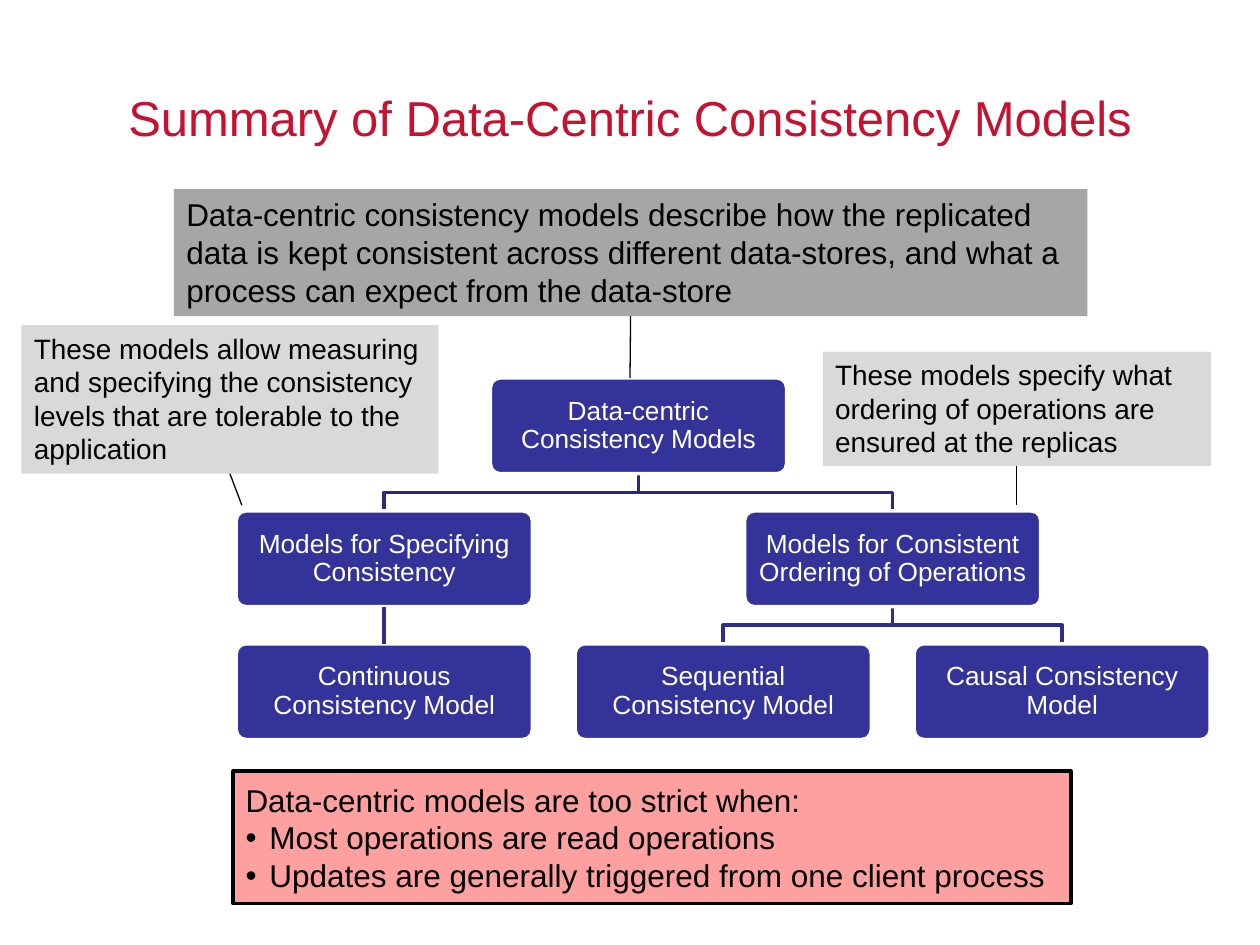
from pptx import Presentation
from pptx.dml.color import RGBColor
from pptx.enum.shapes import MSO_CONNECTOR, MSO_SHAPE
from pptx.enum.text import MSO_ANCHOR, PP_ALIGN
from pptx.oxml.ns import qn
from pptx.util import Inches, Pt
from lxml import etree

RECTANGLE = MSO_SHAPE.RECTANGLE
ROUNDED = MSO_SHAPE.ROUNDED_RECTANGLE
STRAIGHT = MSO_CONNECTOR.STRAIGHT
LEFT, CENTER = PP_ALIGN.LEFT, PP_ALIGN.CENTER
TOP, MIDDLE = MSO_ANCHOR.TOP, MSO_ANCHOR.MIDDLE
BOTTOM_SITE, TOP_SITE = 2, 0

FONT = "Arial"
COLORS = {
    "title": "C41230", "black": "000000", "white": "FFFFFF",
    "node": "333399", "upper_link": "29297B", "lower_link": "2E2E8B",
    "summary": "A6A6A6", "note": "D9D9D9", "warning": "FFA0A0",
}

NODE_WIDTH, NODE_HEIGHT = 2.35, 0.76
TREE_TOP, LEVEL_STEP = 3.0, 1.055
FIRST_CENTER, LEAF_STEP = 3.05, 2.69
LEAF_CENTERS = [FIRST_CENTER + i * LEAF_STEP for i in range(3)]
ORDERING_CENTER = (LEAF_CENTERS[1] + LEAF_CENTERS[2]) / 2
ROOT_CENTER = (FIRST_CENTER + ORDERING_CENTER) / 2

# name: (text, centre, level)
NODES = {
    "root": ("Data-centric Consistency Models", ROOT_CENTER, 0),
    "specifying": ("Models for Specifying Consistency", FIRST_CENTER, 1),
    "ordering": ("Models for Consistent Ordering of Operations", ORDERING_CENTER, 1),
    "continuous": ("Continuous Consistency Model", LEAF_CENTERS[0], 2),
    "sequential": ("Sequential Consistency Model", LEAF_CENTERS[1], 2),
    "causal": ("Causal Consistency Model", LEAF_CENTERS[2], 2),
}
BRANCHES = [("root", "specifying"), ("root", "ordering"),
            ("ordering", "sequential"), ("ordering", "causal")]

# text, box, fill, size, end of the pointer line
NOTES = [
    ("These models allow measuring and specifying the consistency levels that "
     "are tolerable to the application",
     (0.17, 2.58, 3.31, 1.18), "note", 16, (1.92, 4.01)),
    ("These models specify what ordering of operations are ensured at the replicas",
     (6.53, 2.79, 3.08, 0.91), "note", 16, (8.07, 4.01)),
    ("Data-centric consistency models describe how the replicated data is kept "
     "consistent across different data-stores, and what a process can expect "
     "from the data-store",
     (1.38, 1.5, 7.25, 1.01), "summary", 18, (5, 3)),
]
WARNING_HEADING = "Data-centric models are too strict when:"
WARNING_POINTS = ["Most operations are read operations",
                  "Updates are generally triggered from one client process"]


def color(name):
    return RGBColor.from_string(COLORS[name])


def write(paragraph, text, size, font_color, align=LEFT):
    paragraph.alignment = align
    run = paragraph.add_run()
    run.text = text
    run.font.name = FONT
    run.font.size = Pt(size)
    run.font.color.rgb = color(font_color)


def add_bullet(paragraph):
    properties = paragraph._p.get_or_add_pPr()
    properties.set("marL", str(Inches(0.19)))
    properties.set("indent", str(-Inches(0.19)))
    etree.SubElement(properties, qn("a:buFont"), typeface=FONT)
    etree.SubElement(properties, qn("a:buChar"), char="•")


def add_box(slide, kind, box, fill, line=None, anchor=TOP):
    shape = slide.shapes.add_shape(kind, *map(Inches, box))
    shape.shadow.inherit = False
    shape.fill.solid()
    shape.fill.fore_color.rgb = color(fill)
    if line:
        shape.line.color.rgb = color(line)
        shape.line.width = Pt(2)
    else:
        shape.line.fill.background()
    shape.text_frame.word_wrap = True
    shape.text_frame.vertical_anchor = anchor
    return shape


def add_title(slide):
    box = slide.shapes.add_textbox(*map(Inches, (0.5, 0.3, 9, 1.25)))
    box.text_frame.word_wrap = True
    box.text_frame.vertical_anchor = MIDDLE
    write(box.text_frame.paragraphs[0],
          "Summary of Data-Centric Consistency Models", 28, "title", CENTER)


def add_node(slide, text, center, level):
    box = (center - NODE_WIDTH / 2, TREE_TOP + level * LEVEL_STEP, NODE_WIDTH, NODE_HEIGHT)
    node = add_box(slide, ROUNDED, box, "node", "white", MIDDLE)
    node.adjustments[0] = 0.1
    frame = node.text_frame
    frame.margin_left = frame.margin_right = Inches(0.08)
    frame.margin_top = frame.margin_bottom = Inches(0.08)
    paragraph = frame.paragraphs[0]
    paragraph.line_spacing = 0.9
    write(paragraph, text, 15, "white", CENTER)
    return node


def add_branch(slide, parent, child):
    """Draw a right-angled line from a parent's bottom to a child's top."""
    _, start_x, level = NODES[parent]
    end_x = NODES[child][1]
    start_y = TREE_TOP + level * LEVEL_STEP + NODE_HEIGHT
    end_y = TREE_TOP + (level + 1) * LEVEL_STEP
    middle_y = (start_y + end_y) / 2
    builder = slide.shapes.build_freeform(Inches(start_x), Inches(start_y))
    corners = [(start_x, middle_y), (end_x, middle_y), (end_x, end_y)]
    builder.add_line_segments([(Inches(x), Inches(y)) for x, y in corners], close=False)
    branch = builder.convert_to_shape()
    branch.shadow.inherit = False
    branch.fill.background()
    branch.line.color.rgb = color("lower_link" if level else "upper_link")
    branch.line.width = Pt(2)


def add_line(slide, start_shape, end, line_color, width):
    """Draw a straight line from a shape's bottom to the point end."""
    x, y = map(Inches, end)
    connector = slide.shapes.add_connector(STRAIGHT, x, y, x, y)
    connector.begin_connect(start_shape, BOTTOM_SITE)
    connector.line.color.rgb = color(line_color)
    connector.line.width = Pt(width)
    etree.SubElement(connector._element.spPr, qn("a:effectLst"))
    return connector


def add_tree(slide):
    for parent, child in BRANCHES:
        add_branch(slide, parent, child)
    nodes = {name: add_node(slide, *node) for name, node in NODES.items()}
    link = add_line(slide, nodes["specifying"],
                    (FIRST_CENTER, TREE_TOP + 2 * LEVEL_STEP), "lower_link", 2)
    link.end_connect(nodes["continuous"], TOP_SITE)


def add_note(slide, text, box, fill, size, pointer_end):
    note = add_box(slide, RECTANGLE, box, fill)
    write(note.text_frame.paragraphs[0], text, size, "black")
    add_line(slide, note, pointer_end, "black", 0.75)


def add_warning(slide):
    box = add_box(slide, RECTANGLE, (1.85, 6.12, 6.65, 1.05), "warning", "black", MIDDLE)
    frame = box.text_frame
    write(frame.paragraphs[0], WARNING_HEADING, 18, "black")
    for point in WARNING_POINTS:
        paragraph = frame.add_paragraph()
        add_bullet(paragraph)
        write(paragraph, point, 18, "black")


def main():
    presentation = Presentation()
    presentation.slide_width = Inches(10)
    presentation.slide_height = Inches(7.5)
    slide = presentation.slides.add_slide(presentation.slide_layouts[6])
    add_title(slide)
    add_tree(slide)
    for note in NOTES:
        add_note(slide, *note)
    add_warning(slide)
    presentation.save("out.pptx")


if __name__ == "__main__":
    main()
